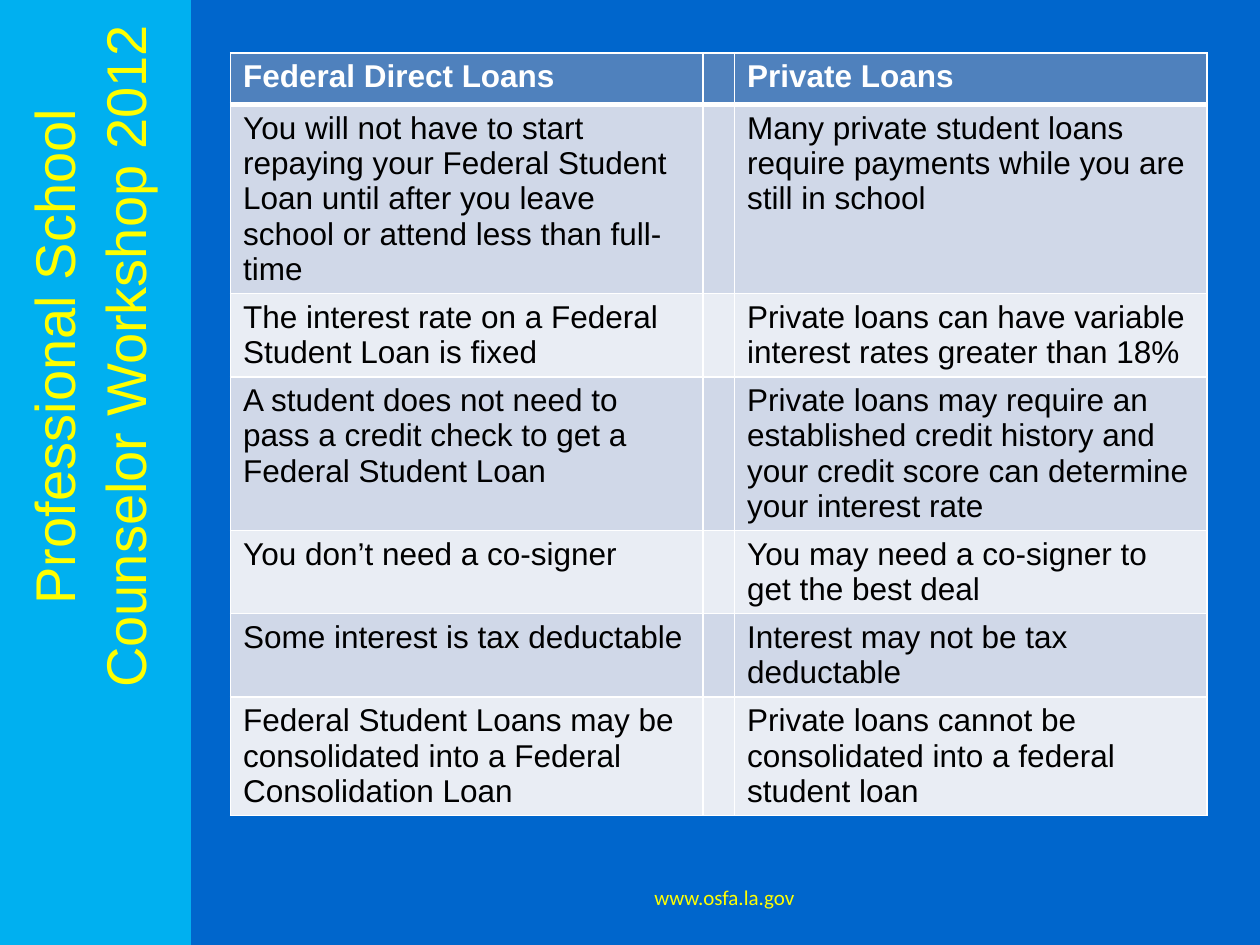
"""Builds a slide comparing federal direct loans with private loans."""
from lxml.etree import SubElement
from pptx import Presentation
from pptx.dml.color import RGBColor
from pptx.enum.shapes import MSO_SHAPE
from pptx.enum.text import MSO_ANCHOR, PP_ALIGN
from pptx.oxml.ns import qn
from pptx.util import Inches, Pt

WIDTH, HEIGHT = 10, 7.5
SIDEBAR = 0.15 * WIDTH
COLUMNS = (3.75, 0.25, 3.75)
ROW_HEIGHT = 0.41
COLORS = {
    "background": "0066CC",
    "sidebar": "00B0F0",
    "accent": "FFFF00",
    "header": "4F81BD",
    "odd": "D0D8E8",
    "even": "E9EDF4",
    "border": "FFFFFF",
    "header_text": "FFFFFF",
    "text": "000000",
}
LOANS = [
    ("Federal Direct Loans", "Private Loans"),
    ("You will not have to start repaying your Federal Student Loan until after "
     "you leave school or attend less than full-time",
     "Many private student loans require payments while you are still in school"),
    ("The interest rate on a Federal Student Loan is fixed",
     "Private loans can have variable interest rates greater than 18%"),
    ("A student does not need to pass a credit check to get a Federal Student Loan",
     "Private loans may require an established credit history and your credit "
     "score can determine your interest rate"),
    ("You don’t need a co-signer",
     "You may need a co-signer to get the best deal"),
    ("Some interest is tax deductable",
     "Interest may not be tax deductable"),
    ("Federal Student Loans may be consolidated into a Federal Consolidation Loan",
     "Private loans cannot be consolidated into a federal student loan"),
]


def paint(fill, color):
    fill.solid()
    fill.fore_color.rgb = RGBColor.from_string(COLORS[color])


def write(frame, text, size, font, color, align=PP_ALIGN.LEFT, bold=False):
    frame.text = text
    frame.word_wrap = True
    paragraph = frame.paragraphs[0]
    paragraph.alignment = align
    for run in paragraph.runs:
        run.font.size = Pt(size)
        run.font.name = font
        run.font.bold = bold
        run.font.color.rgb = RGBColor.from_string(COLORS[color])


def add_borders(cell, bottom):
    properties = cell._tc.get_or_add_tcPr()
    for side, width in (("L", 1), ("R", 1), ("T", 1), ("B", bottom)):
        border = SubElement(properties, qn(f"a:ln{side}"), w=str(Pt(width)))
        solid = SubElement(border, qn("a:solidFill"))
        SubElement(solid, qn("a:srgbClr"), val=COLORS["border"])


def add_sidebar(slide):
    sidebar = slide.shapes.add_shape(
        MSO_SHAPE.RECTANGLE, 0, 0, Inches(SIDEBAR), Inches(HEIGHT))
    sidebar.shadow.inherit = False
    paint(sidebar.fill, "sidebar")
    paint(sidebar.line.fill, "sidebar")
    sidebar.line.width = Pt(2)


def add_workshop_name(slide):
    workshop = slide.shapes.add_textbox(
        Inches(0.08), Inches(0.08), Inches(1.28), Inches(5.5))
    frame = workshop.text_frame
    write(frame, "Professional School Counselor Workshop 2012", 32, "Arial",
          "accent", PP_ALIGN.CENTER)
    frame.paragraphs[0].line_spacing = 1.05
    frame._txBody.bodyPr.set("vert", "vert270")


def add_loan_table(slide):
    loans = slide.shapes.add_table(
        len(LOANS), len(COLUMNS), Inches(1.83), Inches(0.42),
        Inches(sum(COLUMNS)), Inches(ROW_HEIGHT * len(LOANS))).table
    for column, width in zip(loans.columns, COLUMNS):
        column.width = Inches(width)
    for index, (federal, private) in enumerate(LOANS):
        header = index == 0
        band = "header" if header else ("even", "odd")[index % 2]
        for cell, text in zip(loans.rows[index].cells, (federal, "", private)):
            if header:
                add_borders(cell, bottom=3)
            paint(cell.fill, band)
            if text:
                write(cell.text_frame, text, 18, "Arial",
                      "header_text" if header else "text", bold=header)


def add_website(slide):
    website = slide.shapes.add_textbox(
        Inches(SIDEBAR), Inches(6.92), Inches(WIDTH - SIDEBAR), Inches(0.4))
    write(website.text_frame, "www.osfa.la.gov", 12, "Calibri", "accent",
          PP_ALIGN.CENTER)
    website.text_frame.vertical_anchor = MSO_ANCHOR.MIDDLE


def main():
    deck = Presentation()
    deck.slide_width, deck.slide_height = Inches(WIDTH), Inches(HEIGHT)
    slide = deck.slides.add_slide(deck.slide_layouts.get_by_name("Blank"))
    paint(slide.background.fill, "background")
    add_sidebar(slide)
    add_workshop_name(slide)
    add_loan_table(slide)
    add_website(slide)
    deck.save("out.pptx")


if __name__ == "__main__":
    main()
